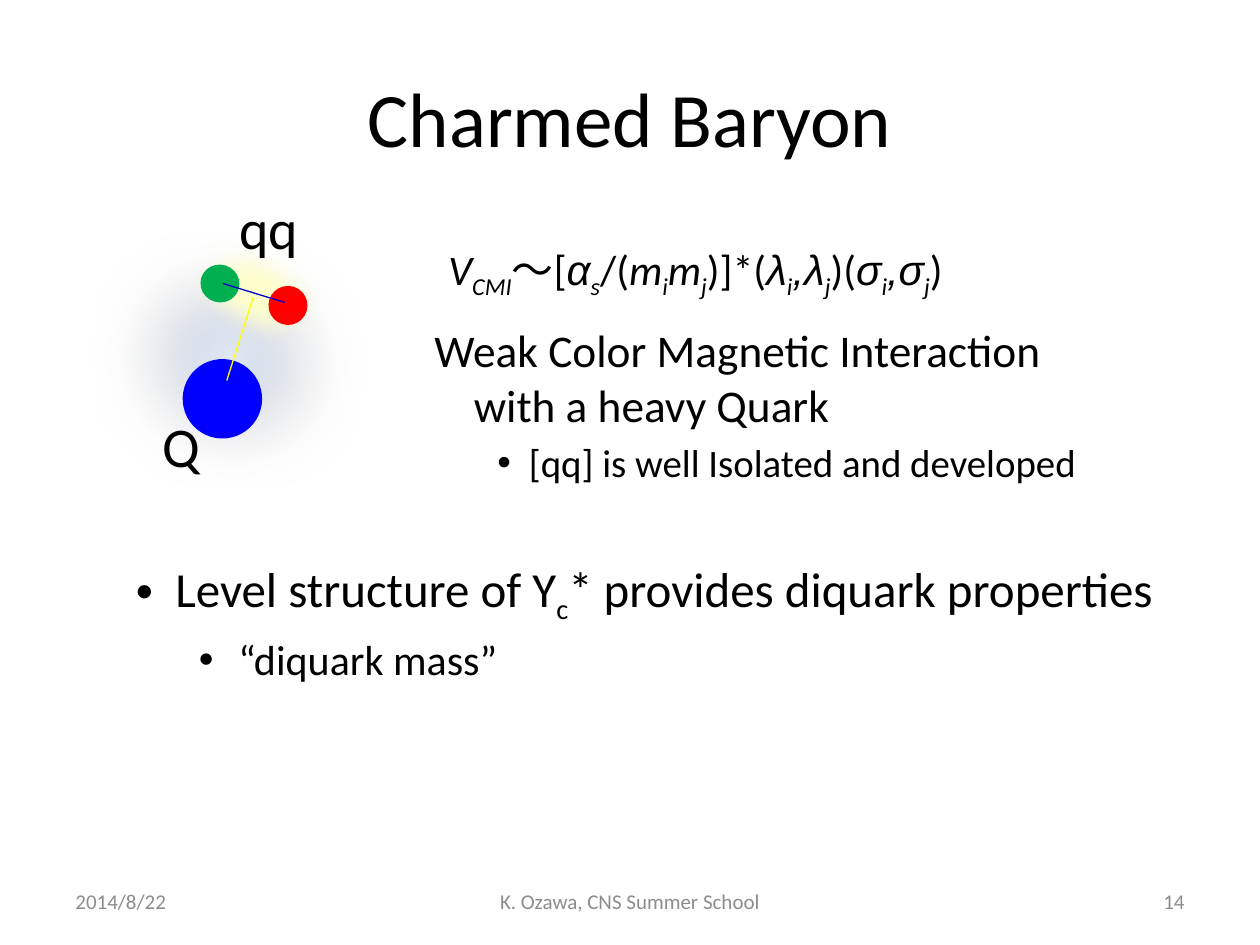
from pptx import Presentation
from pptx.dml.color import RGBColor
from pptx.enum.shapes import MSO_CONNECTOR as LINK, MSO_SHAPE as FORM
from pptx.enum.text import MSO_ANCHOR as ANCHOR, MSO_AUTO_SIZE as AUTO, PP_ALIGN as ALIGN
from pptx.oxml import parse_xml
from pptx.oxml.ns import nsdecls, qn
from pptx.oxml.xmlchemy import OxmlElement as Element
from pptx.util import Pt


def tint(fill, color):
    fill.solid()
    fill.fore_color.rgb = RGBColor.from_string(color)


def write(shapes, area, paras, align=ALIGN.LEFT, anchor=ANCHOR.TOP,
          wrap=True, color="000000"):
    """Add a text box; each para is (size, margin, indent, bullet, runs).

    A run is (text, marks): i for italic, s for subscript, g for Greek.
    """
    frame = shapes.add_textbox(*map(Pt, area)).text_frame
    frame.word_wrap = wrap
    frame.auto_size = AUTO.NONE if wrap else AUTO.SHAPE_TO_FIT_TEXT
    frame.vertical_anchor = anchor
    for n, (size, margin, indent, bullet, runs) in enumerate(paras):
        para = frame.add_paragraph() if n else frame.paragraphs[0]
        para.alignment = align
        props = para._p.get_or_add_pPr()
        if margin:
            para.space_before = Pt(round(size * 0.2, 1))
            props.set("marL", str(Pt(margin)))
            props.set("indent", str(Pt(indent)))
        if bullet:
            face = Element("a:buFont")
            face.set("typeface", "Arial")
            mark = Element("a:buChar")
            mark.set("char", "•")
            props.extend([face, mark])
        for words, marks in runs:
            run = para.add_run()
            run.text = words
            font = run.font
            font.size = Pt(size)
            font.name = "Arial" if "g" in marks else "Calibri"
            font.italic = "i" in marks
            tint(font.fill, color)
            if "s" in marks:
                run._r.get_or_add_rPr().set("baseline", "-25000")


deck = Presentation()
deck.slide_width, deck.slide_height = Pt(720), Pt(540)
slide = deck.slides.add_slide(deck.slide_layouts[6])
shapes = slide.shapes

write(shapes, (36, 21.6, 648, 90), [(44, 0, 0, False, [("Charmed Baryon", "")])],
      ALIGN.CENTER, ANCHOR.MIDDLE)

# Baryon: a soft cloud, a soft diquark halo and three quarks
baryon = shapes.add_group_shape().shapes
balls = [
    ((36.7, 118.8, 187.2, 173.5), None, 45),
    ((103, 136.8, 87.8, 61.2), "FFFFCC", 12.5),
    ((114.5, 151.2, 22.3, 21.6), "00B050", 0),
    ((104.4, 205.2, 45.4, 45.4), "0000FF", 0),
    ((153.4, 163.4, 22.3, 22.3), "FF0000", 0),
]
for area, color, soft in balls:
    ball = baryon.add_shape(FORM.OVAL, *map(Pt, area))
    ball.rotation = 17
    ball.shadow.inherit = False
    props = ball.element.spPr
    if color:
        tint(ball.fill, color)
    else:
        props.find(qn("a:prstGeom")).addnext(parse_xml(
            f'<a:gradFill {nsdecls("a")} rotWithShape="1"><a:gsLst>'
            '<a:gs pos="0"><a:srgbClr val="9AB5E4"><a:alpha val="42000"/></a:srgbClr></a:gs>'
            '<a:gs pos="40000"><a:srgbClr val="808080"/></a:gs>'
            '<a:gs pos="100000"><a:srgbClr val="948A54"/></a:gs></a:gsLst>'
            '<a:path path="circle"><a:fillToRect l="50000" t="50000" r="50000" b="50000"/>'
            '</a:path></a:gradFill>'))
    if soft:
        tint(ball.line.fill, "385D8A")
        ball.line.width = Pt(2)
        edge = Element("a:softEdge")
        edge.set("rad", str(Pt(soft)))
        props.find(qn("a:effectLst")).append(edge)
    else:
        ball.line.fill.background()

for ends, color in [((144.7, 169.9, 129.6, 217.4), "FFFF00"),
                    ((162.7, 172.8, 127.4, 162), "0000CC")]:
    bond = baryon.add_connector(LINK.STRAIGHT, *map(Pt, ends))
    tint(bond.line.fill, color)
    bond.line.width = Pt(0.75)
    bond.element.spPr.append(Element("a:effectLst"))

for area, name in [((85.7, 231.8, 36, 46), "Q"), ((129.6, 107.3, 49, 46), "qq")]:
    write(baryon, area, [(32, 0, 0, False, [(name, "")])], wrap=False)

# Statements and formula
write(shapes, (241.2, 180.7, 408.2, 96.5), [
    (25.9, 22.5, -22.5, False,
     [("Weak Color Magnetic Interaction with a heavy Quark", "")]),
    (22.2, 54, -18, True, [("[qq] is well Isolated and developed", "")]),
])
write(shapes, (70.6, 315.4, 601.2, 96.5), [
    (28, 22.5, -22.5, True,
     [("Level structure of Y", ""), ("c", "s"), ("* provides diquark properties", "")]),
    (24, 58.5, -22.5, True, [("“diquark mass”", "")]),
])
formula = [
    ("V", "i"), ("CMI", "is"), ("～[", ""), ("α", "ig"), ("s", "is"), ("/(", ""),
    ("m", "i"), ("i", "is"), ("m", "i"), ("j", "is"), (")]*(", ""),
    ("λ", "ig"), ("i", "is"), (",λ", "ig"), ("j", "is"), (")(", ""),
    ("σ", "ig"), ("i", "is"), (",σ", "ig"), ("j", "is"), (")", ""),
]
write(shapes, (249.1, 135.4, 309.6, 36), [(24, 0, 0, False, formula)], wrap=False)

# Footer
for left, width, words, align in [
    (36, 168, "2014/8/22", ALIGN.LEFT),
    (246, 228, "K. Ozawa, CNS Summer School", ALIGN.CENTER),
    (516, 168, "14", ALIGN.RIGHT),
]:
    write(shapes, (left, 500.5, width, 28.8), [(12, 0, 0, False, [(words, "")])],
          align, ANCHOR.MIDDLE, color="8C8C8C")

deck.save("out.pptx")
